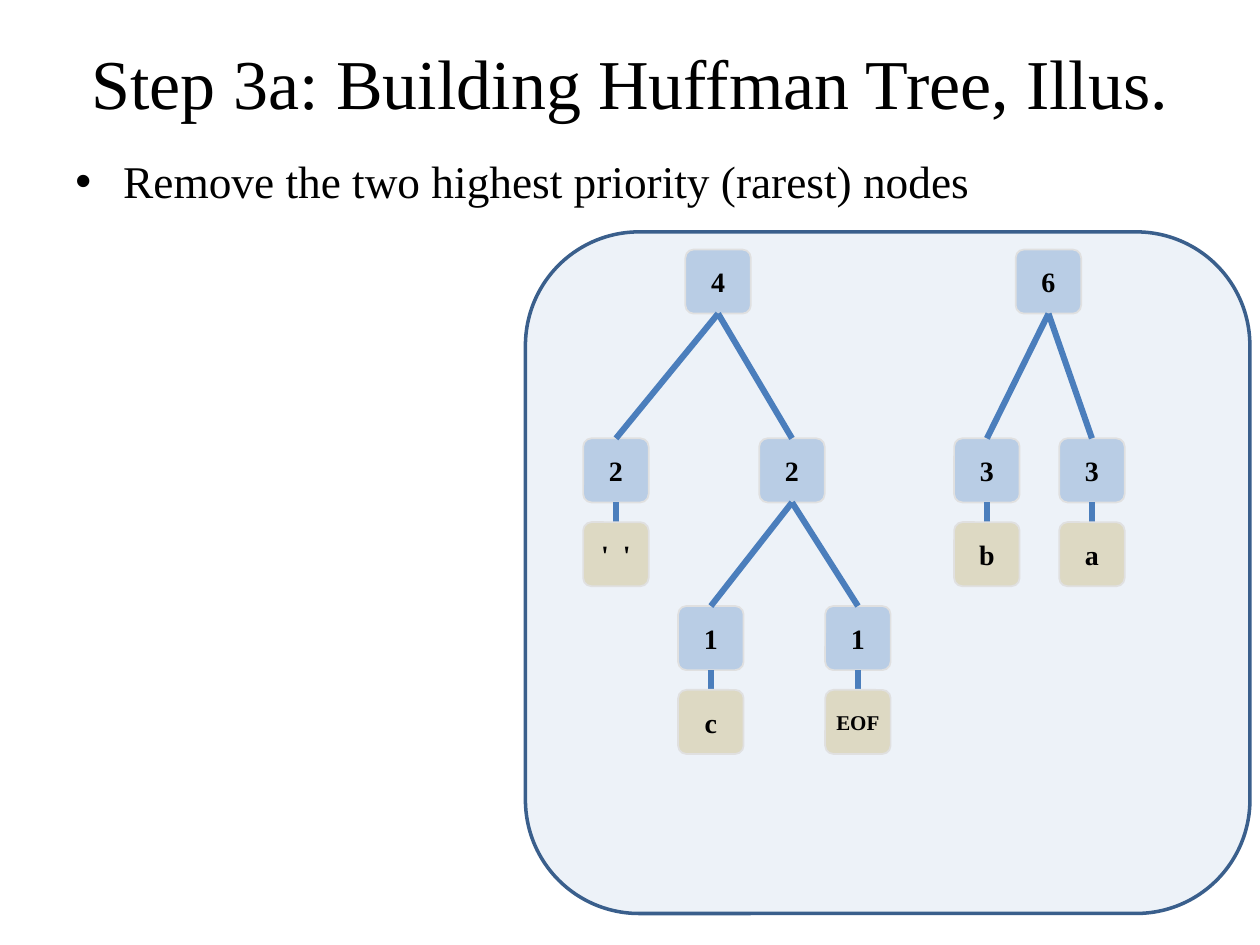
from dataclasses import dataclass
from lxml import etree
from pptx import Presentation
from pptx import util as u
from pptx.dml.color import RGBColor
from pptx.enum import shapes, text
from pptx.oxml.ns import qn

COLORS = {
    "ink": "000000", "panel": "4F81BD", "panel_edge": "3A5F8C",
    "count": "B9CDE5", "symbol": "DDD9C3", "node_edge": "E0E0E0", "branch": "4B7EBC",
}
FONT = "Times New Roman"
GRID = 100  # the panel has this many columns and rows
LEVEL_ROWS = (2.6, 30.3, 54.9)  # top of each tree level
NODE_COLS, NODE_ROWS = 9.04, 9.4
SYMBOL_STEP = 12.3  # rows from a count down to its symbol


@dataclass
class Box:
    left: float
    top: float
    width: float
    height: float

    def x(self, col):
        return u.Inches(self.left + self.width * col / GRID)

    def y(self, row):
        return u.Inches(self.top + self.height * row / GRID)

    def edges(self):
        return [u.Inches(v) for v in (self.left, self.top, self.width, self.height)]


@dataclass
class Node:
    count: str
    col: float  # centre column
    symbol: str = ""
    children: tuple = ()


TREES = (
    Node("4", 26.6, children=(
        Node("2", 12.5, "'  '"),
        Node("2", 36.8, children=(Node("1", 25.6, "c"), Node("1", 45.9, "EOF"))),
    )),
    Node("6", 72.2, children=(Node("3", 63.7, "b"), Node("3", 78.2, "a"))),
)


def color(name):
    return RGBColor.from_string(COLORS[name])


def add_run(paragraph, words, size, bold=False):
    run = paragraph.add_run()
    run.text = words
    run.font.name, run.font.size, run.font.bold = FONT, u.Pt(size), bold
    run.font.color.rgb = color("ink")


def style(shape, fill, edge, width):
    shape.shadow.inherit = False
    shape.fill.solid()
    shape.fill.fore_color.rgb = color(fill)
    shape.line.color.rgb = color(edge)
    shape.line.width = u.Pt(width)


def add_title(slide, box, words):
    title = slide.shapes.title
    title.left, title.top, title.width, title.height = box.edges()
    frame = title.text_frame
    frame.vertical_anchor = text.MSO_ANCHOR.MIDDLE
    paragraph = frame.paragraphs[0]
    paragraph.alignment = text.PP_ALIGN.CENTER
    add_run(paragraph, words, 40)


def add_bullet(slide, box, words):
    frame = slide.shapes.add_textbox(*box.edges()).text_frame
    frame.word_wrap = True
    paragraph = frame.paragraphs[0]
    paragraph.space_before = u.Pt(5)
    props = paragraph._p.get_or_add_pPr()
    indent = u.Inches(0.38)
    props.set("marL", str(indent))
    props.set("indent", str(-indent))
    etree.SubElement(props, qn("a:buFont")).set("typeface", "Arial")
    etree.SubElement(props, qn("a:buChar")).set("char", "•")
    add_run(paragraph, words, 25.9)


def add_panel(slide, box):
    panel = slide.shapes.add_shape(shapes.MSO_SHAPE.ROUNDED_RECTANGLE, *box.edges())
    style(panel, "panel", "panel_edge", 2)
    tint = panel._element.spPr.find(qn("a:solidFill"))[0]
    etree.SubElement(tint, qn("a:alpha")).set("val", "10000")


def add_tile(group, box, col, row, label, fill):
    left, top = box.x(col - NODE_COLS / 2), box.y(row)
    tile = group.shapes.add_shape(
        shapes.MSO_SHAPE.ROUNDED_RECTANGLE, left, top,
        box.x(col + NODE_COLS / 2) - left, box.y(row + NODE_ROWS) - top)
    tile.adjustments[0] = 0.13
    style(tile, fill, "node_edge", 1)
    frame = tile.text_frame
    frame.word_wrap = False
    frame.vertical_anchor = text.MSO_ANCHOR.MIDDLE
    paragraph = frame.paragraphs[0]
    paragraph.alignment = text.PP_ALIGN.CENTER
    add_run(paragraph, label, 12 if label == "EOF" else 16, bold=True)


def add_branch(group, box, start, end):
    """Join two (column, row) points."""
    branch = group.shapes.add_connector(
        shapes.MSO_CONNECTOR.STRAIGHT,
        box.x(start[0]), box.y(start[1]), box.x(end[0]), box.y(end[1]))
    branch.line.color.rgb = color("branch")
    branch.line.width = u.Pt(3.5)
    etree.SubElement(branch._element.spPr, qn("a:effectLst"))


def add_tree(group, box, node, level=0):
    """Draw the subtrees first, then the node and the branches below it."""
    for child in node.children:
        add_tree(group, box, child, level + 1)
    row = LEVEL_ROWS[level]
    foot = (node.col, row + NODE_ROWS)
    add_tile(group, box, node.col, row, node.count, "count")
    for child in node.children:
        add_branch(group, box, foot, (child.col, LEVEL_ROWS[level + 1]))
    if node.symbol:
        symbol_row = row + SYMBOL_STEP
        add_branch(group, box, foot, (node.col, symbol_row))
        add_tile(group, box, node.col, symbol_row, node.symbol, "symbol")


def main():
    deck = Presentation()
    deck.slide_width, deck.slide_height = u.Inches(10), u.Inches(7.5)
    slide = deck.slides.add_slide(deck.slide_layouts.get_by_name("Title Only"))
    queue = Box(4.17, 1.84, 5.75, 5.41)
    add_panel(slide, queue)
    add_title(slide, Box(0.5, 0.3, 9, 0.7), "Step 3a: Building Huffman Tree, Illus.")
    add_bullet(slide, Box(0.5, 1.17, 9, 0.5), "Remove the two highest priority (rarest) nodes")
    for tree in TREES:
        add_tree(slide.shapes.add_group_shape(), queue, tree)
    deck.save("out.pptx")


if __name__ == "__main__":
    main()
